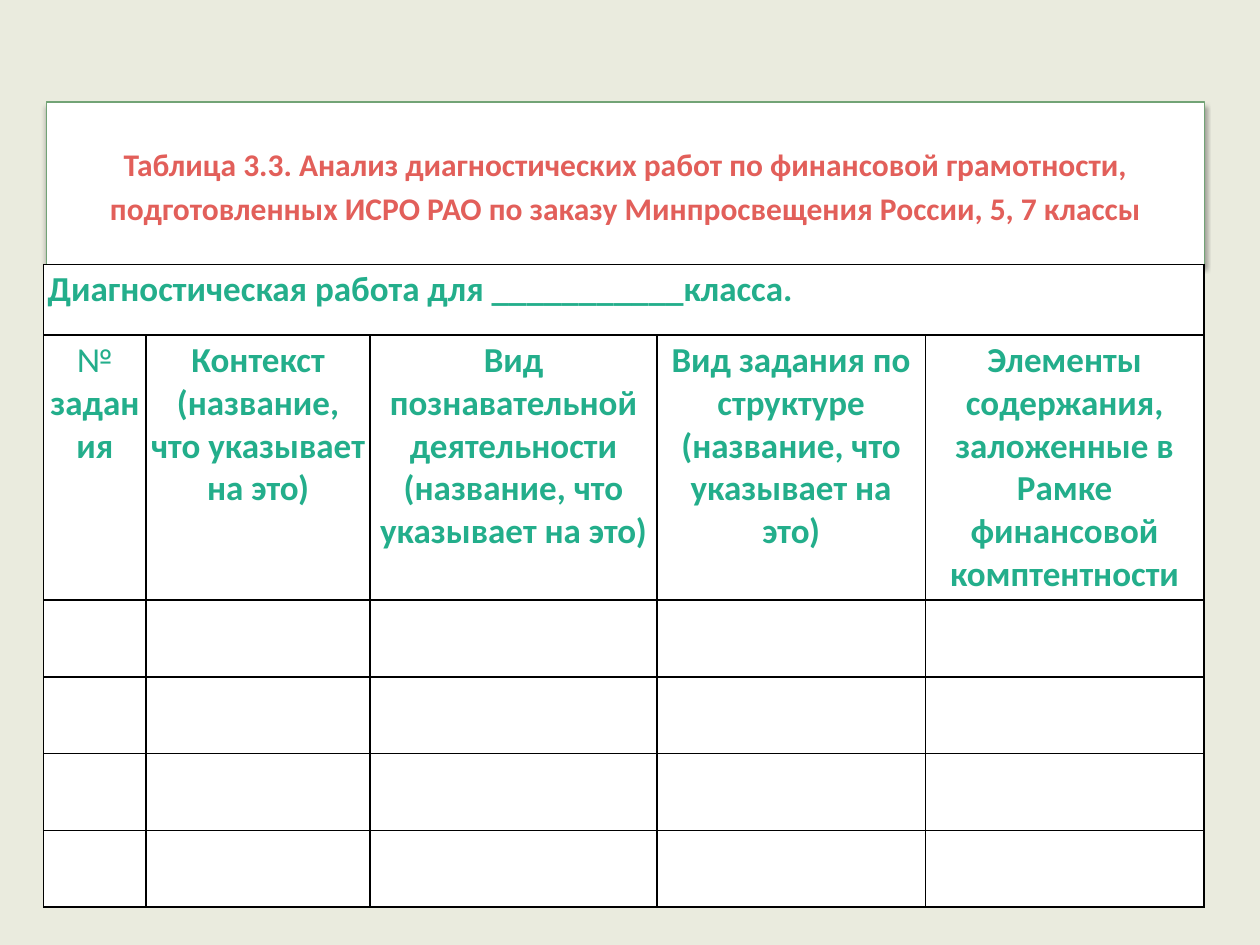
from pptx import Presentation
from pptx import util as u
from pptx.dml import color
from pptx.enum import text
from pptx.oxml import ns
from lxml import etree

COLORS = {
    "background": "EAEBDE",
    "panel": "FFFFFF",
    "panel_line": "72A376",
    "title": "E25F5A",
    "table_text": "23AE8B",
    "border": "000000",
}
CENTER = text.PP_ALIGN.CENTER
LEFT = text.PP_ALIGN.LEFT


class SlideBuilder:
    font = "Calibri"
    cell_margin = u.Pt(2.2)

    def __init__(self, deck):
        self.slide = deck.slides.add_slide(deck.slide_layouts[5])
        self.paint(self.slide.background.fill, "background")

    def paint(self, fill, name):
        fill.solid()
        fill.fore_color.rgb = color.RGBColor.from_string(COLORS[name])

    def style_run(self, run, size, name, bold=True):
        run.font.name = self.font
        run.font.size = u.Pt(size)
        run.font.bold = bold
        run.font.color.rgb = color.RGBColor.from_string(COLORS[name])

    def title(self, wording, left, top, width, height):
        heading = self.slide.shapes.title
        heading.left, heading.top = u.Pt(left), u.Pt(top)
        heading.width, heading.height = u.Pt(width), u.Pt(height)
        self.paint(heading.fill, "panel")
        self.paint(heading.line.fill, "panel_line")
        heading.line.width = u.Pt(0.75)
        self.shadow(heading)
        frame = heading.text_frame
        frame.text = wording
        frame.word_wrap = True
        frame.auto_size = text.MSO_AUTO_SIZE.NONE
        frame.vertical_anchor = text.MSO_ANCHOR.MIDDLE
        paragraph = frame.paragraphs[0]
        paragraph.alignment = CENTER
        paragraph.line_spacing = 1.15
        self.style_run(paragraph.runs[0], 18, "title")

    def shadow(self, shape):
        shape.shadow.inherit = False
        effects = shape.element.spPr.find(ns.qn("a:effectLst"))
        outer = etree.SubElement(effects, ns.qn("a:outerShdw"), blurRad=str(u.Pt(3.1)),
                                 dist=str(u.Pt(1.8)), dir="5400000", rotWithShape="0")
        tint = etree.SubElement(outer, ns.qn("a:srgbClr"), val="000000")
        etree.SubElement(tint, ns.qn("a:alpha"), val="35000")

    def table(self, left, top, widths, heights):
        grid = self.slide.shapes.add_table(
            len(heights), len(widths), u.Pt(left), u.Pt(top),
            u.Pt(sum(widths)), u.Pt(sum(heights))).table
        grid.first_row = grid.horz_banding = False
        for column, width in zip(grid.columns, widths):
            column.width = u.Pt(width)
        for row, height in zip(grid.rows, heights):
            row.height = u.Pt(height)
        for cell in grid.iter_cells():
            self.borders(cell)
            self.paint(cell.fill, "panel")
            cell.margin_left = cell.margin_right = self.cell_margin
            cell.margin_top = cell.margin_bottom = self.cell_margin
        return grid

    def borders(self, cell):
        properties = cell._tc.get_or_add_tcPr()
        for side in ("lnL", "lnR", "lnT", "lnB"):
            edge = etree.SubElement(properties, ns.qn(f"a:{side}"), w=str(u.Pt(1)))
            fill = etree.SubElement(edge, ns.qn("a:solidFill"))
            etree.SubElement(fill, ns.qn("a:srgbClr"), val=COLORS["border"])

    def cell_text(self, cell, wording, alignment):
        cell.text = wording
        for paragraph in cell.text_frame.paragraphs:
            paragraph.alignment = alignment
            for run in paragraph.runs:
                self.style_run(run, 20, "table_text")


def main():
    deck = Presentation()
    deck.slide_width, deck.slide_height = u.Pt(720), u.Pt(540)
    builder = SlideBuilder(deck)
    builder.title(
        "Таблица 3.3. Анализ диагностических работ по финансовой грамотности, "
        "подготовленных ИСРО РАО по заказу Минпросвещения России, 5, 7 классы",
        26.6, 58.3, 661.7, 92.9)

    task_analysis = builder.table(
        25, 151.2, [58.5, 128, 164, 153.3, 159.2], [40.3, 151.5] + [43.85] * 4)
    class_line = task_analysis.cell(0, 0)
    class_line.merge(task_analysis.cell(0, 4))
    builder.cell_text(class_line, "Диагностическая работа для ___________класса.", LEFT)

    headings = [
        "№ ",
        "Контекст\n(название, что указывает на это)",
        "Вид познавательной деятельности (название, что указывает на это)",
        "Вид задания по структуре (название, что указывает на это)",
        "Элементы содержания, заложенные в Рамке финансовой комптентности",
    ]
    for column, heading in enumerate(headings):
        builder.cell_text(task_analysis.cell(1, column), heading, CENTER)
    task_number = task_analysis.cell(1, 0).text_frame.paragraphs[0]
    task_number.runs[0].font.bold = False
    task_word = task_number.add_run()
    task_word.text = "задания"
    builder.style_run(task_word, 20, "table_text")

    deck.save("out.pptx")


if __name__ == "__main__":
    main()
